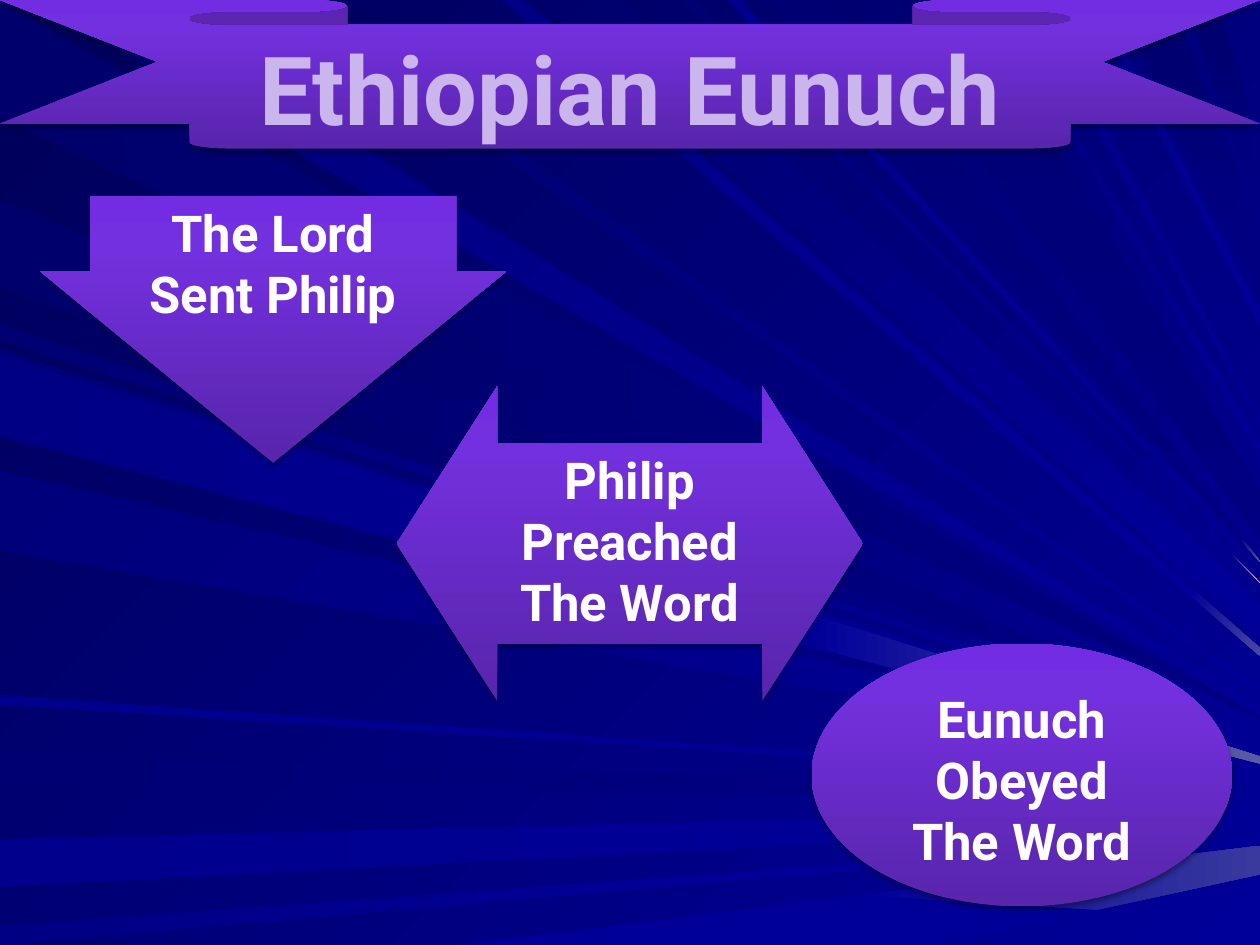
from copy import deepcopy
from dataclasses import dataclass
from itertools import pairwise

from lxml import etree
from pptx import Presentation
from pptx.dml.color import RGBColor
from pptx.dml.fill import FillFormat
from pptx.enum.shapes import MSO_SHAPE
from pptx.enum.text import MSO_ANCHOR, PP_ALIGN
from pptx.oxml.ns import qn
from pptx.shapes.autoshape import Shape
from pptx.slide import Slide
from pptx.util import Pt

RIBBON = MSO_SHAPE.DOWN_RIBBON
DOWN_ARROW = MSO_SHAPE.DOWN_ARROW
TWO_WAY_ARROW = MSO_SHAPE.LEFT_RIGHT_ARROW
OVAL = MSO_SHAPE.OVAL
TOP_ANCHOR = MSO_ANCHOR.TOP
CENTER = PP_ALIGN.CENTER

W, H = 793.7, 595.3  # slide size in points
LEFT, TOP, BOTTOM = "left", "top", "bottom"

Point = tuple[float, float]


@dataclass(frozen=True)
class Theme:
    font: str = "Roboto"
    title_size: float = 60
    step_size: float = 32
    title: str = "CAB5EC"
    text: str = "FFFFFF"
    shadow: str = "000000"
    night: str = "000058"
    deep: str = "00006C"
    dark: str = "000073"
    dusk: str = "00007B"
    mid: str = "000080"
    blue: str = "000085"
    bright: str = "00008C"
    royal: str = "000099"
    glow: str = "39399E"
    flare: str = "4A4AA1"
    haze: str = "5A5AA6"
    spark: str = "FF9999"
    purple_dark: str = "5825AB"
    purple: str = "7330DE"
    purple_light: str = "722DE2"


T = Theme()


@dataclass(frozen=True)
class Beam:
    """A straight beam from an edge of the slide to its right side."""
    edge: str
    near: Point  # span on the starting edge
    far: Point  # span on the right side
    angle: int
    colors: tuple[str, ...]
    split: float = 1  # share of the length where the colour run changes


@dataclass(frozen=True)
class Step:
    kind: MSO_SHAPE
    box: tuple[float, float, float, float]
    lines: tuple[str, ...]
    adjustments: tuple[float, ...] = ()
    size: float = T.step_size
    color: str = T.text


BEAMS = (
    Beam(LEFT, (1.4, 73.4), (452.2, 452.9), 0, (T.deep, T.mid)),
    Beam(TOP, (20.9, 79.9), (447.1, 445.7), 45, (T.dusk, T.royal)),
    Beam(LEFT, (473, 494.6), (501.1, 501.8), 0, (T.dark, T.mid, T.royal), 0.7),
    Beam(LEFT, (528.5, 558.7), (509.8, 517), 0, (T.bright, T.royal, T.royal), 0.83),
    Beam(LEFT, (583.2, H), (525.6, 525.6), 0, (T.blue, T.royal, T.royal), 0.63),
    Beam(BOTTOM, (288.7, 589), (532.8, 550.8), 0, (T.royal, T.royal, T.glow), 0.5),
    Beam(LEFT, (204.5, 214.6), (467.3, 467.3), 45, (T.dark, T.royal, T.royal), 0.87),
    Beam(LEFT, (126, 180.7), (463, 463.7), 0, (T.deep, T.mid, T.royal), 0.87),
    Beam(TOP, (316.1, 330.5), (413.3, 408.2), 45, (T.blue, T.royal, T.flare), 0.91),
    Beam(TOP, (338.4, 391), (402.5, 380.2), 45, (T.deep, T.royal, T.royal), 0.92),
    Beam(TOP, (429.1, 437.8), (367.2, 367.2), 45, (T.dark, T.royal, T.spark), 0.95),
    Beam(TOP, (481, 524.2), (354.2, 353.5), 90, (T.dark, T.mid, T.haze), 0.96),
    Beam(TOP, (703.4, 738), (187.9, 145.4), 90, (T.deep, T.mid, T.mid), 0.78),
    Beam(TOP, (745.9, 765.4), (132.5, 90.7), 90, (T.deep, T.mid, T.mid), 0.85),
    Beam(LEFT, (220.3, 271.4), (473, 477.4), 45, (T.dusk, T.royal)),
    Beam(LEFT, (296.6, 347), (480.2, 481), 45, (T.dusk, T.royal)),
    Beam(LEFT, (437.8, 444.2), (493.2, 494.6), 0, (T.bright, T.royal)),
    Beam(TOP, (178.6, 195.8), (437.8, 434.2), 45, (T.deep, T.royal)),
    Beam(TOP, (457.9, 466.6), (360, 359.3), 45, (T.bright, T.royal)),
    Beam(TOP, (544.3, 611.3), (339.8, 309.6), 90, (T.dark, T.mid)),
    Beam(TOP, (622.8, 628.6), (285.8, 280.8), 45, (T.dusk, T.royal)),
    Beam(TOP, (646.6, 654.5), (267.1, 265.7), 45, (T.blue, T.royal)),
    Beam(TOP, (686.2, 691.9), (205.2, 197.3), 45, (T.bright, T.royal)),
    Beam(LEFT, (224.6, 275), (476.6, 481), 0, (T.blue, T.royal, T.haze), 0.64),
)

STEPS = (
    Step(RIBBON, (0, 0, W, 93.6), ("Ethiopian Eunuch",), (0.167, 0.699), T.title_size, T.title),
    Step(DOWN_ARROW, (25.2, 123.8, 293.8, 167.8), ("The Lord", "Sent Philip"), (0.784, 0.719)),
    Step(TWO_WAY_ARROW, (249.8, 243.4, 293.8, 198), ("Philip", "Preached", "The Word"), (0.637, 0.32)),
    Step(OVAL, (511.2, 405.4, 265, 165.6), ("Eunuch", "Obeyed", "The Word")),
)


def fill_gradient(fill: FillFormat, stops: dict[float, str], clockwise: int) -> None:
    fill.gradient()
    fill.gradient_angle = (360 - clockwise) % 360
    last = fill.gradient_stops[-1]._gs
    for _ in range(len(stops) - 2):
        last.addprevious(deepcopy(last))
    for stop, (position, color) in zip(fill.gradient_stops, stops.items()):
        stop.position = position
        stop.color.rgb = RGBColor.from_string(color)


def strip_outline(s: Shape) -> None:
    s.shadow.inherit = False
    s.line.fill.background()


def add_shadow(s: Shape) -> None:
    effects = s._element.spPr.find(qn("a:effectLst"))
    outer = etree.SubElement(effects, qn("a:outerShdw"), blurRad=str(Pt(3.1)),
                             dist=str(Pt(1.8)), dir="5400000", rotWithShape="0")
    color = etree.SubElement(outer, qn("a:srgbClr"), val=T.shadow)
    etree.SubElement(color, qn("a:alpha"), val="35000")


def edge_point(edge: str, along: float) -> Point:
    return {LEFT: (0, along), TOP: (along, 0), BOTTOM: (along, H)}[edge]


def between(start: Point, end: Point, share: float) -> Point:
    return tuple(a + (b - a) * share for a, b in zip(start, end))


def add_beam(slide: Slide, beam: Beam) -> None:
    sides = [(edge_point(beam.edge, n), (W, f)) for n, f in zip(beam.near, beam.far)]
    cuts = (0, beam.split, 1) if len(beam.colors) > 2 else (0, 1)
    for (t0, t1), (c0, c1) in zip(pairwise(cuts), pairwise(beam.colors)):
        (a, d), (b, c) = [(between(*side, t0), between(*side, t1)) for side in sides]
        first, *rest = [(Pt(x), Pt(y)) for x, y in (a, b, c, d)]
        builder = slide.shapes.build_freeform(*first)
        builder.add_line_segments(rest, close=True)
        s = builder.convert_to_shape()
        strip_outline(s)
        fill_gradient(s.fill, {0: c0, 1: c1}, beam.angle)


def add_step(slide: Slide, step: Step) -> None:
    s = slide.shapes.add_shape(step.kind, *map(Pt, step.box))
    for i, value in enumerate(step.adjustments):
        s.adjustments[i] = value
    strip_outline(s)
    fill_gradient(s.fill, {0: T.purple_dark, 0.8: T.purple, 1: T.purple_light}, 270)
    add_shadow(s)
    tf = s.text_frame
    tf.word_wrap = True
    tf.vertical_anchor = TOP_ANCHOR
    for i, line in enumerate(step.lines):
        p = tf.add_paragraph() if i else tf.paragraphs[0]
        p.alignment = CENTER
        r = p.add_run()
        r.text = line
        r.font.name = T.font
        r.font.size = Pt(step.size)
        r.font.bold = True
        r.font.color.rgb = RGBColor.from_string(step.color)


def main() -> None:
    prs = Presentation()
    prs.slide_width, prs.slide_height = Pt(W), Pt(H)
    slide = prs.slides.add_slide(prs.slide_layouts[6])

    # Night-blue background with its beams
    fill_gradient(slide.background.fill, {0: T.night, 1: T.royal}, 45)
    for beam in BEAMS:
        add_beam(slide, beam)

    # Title ribbon and the three steps of the story
    for step in STEPS:
        add_step(slide, step)

    prs.save("out.pptx")


if __name__ == "__main__":
    main()
